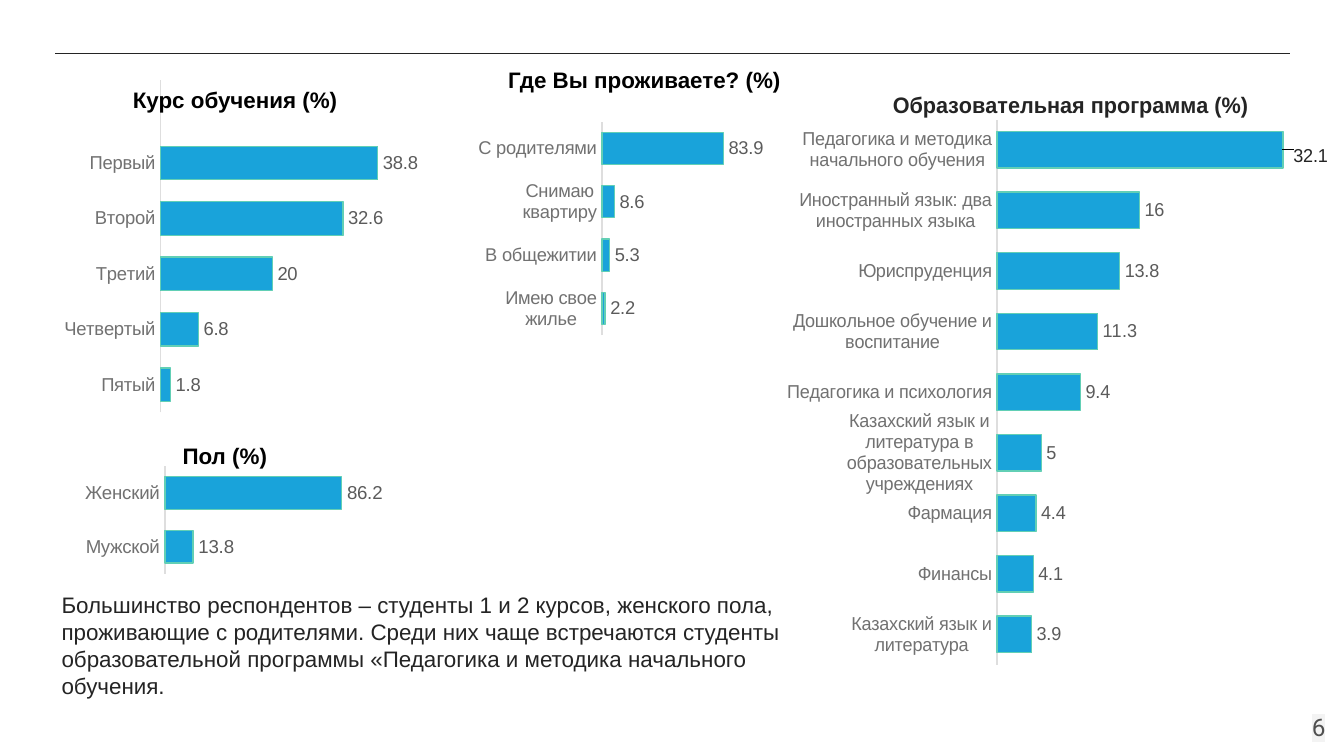
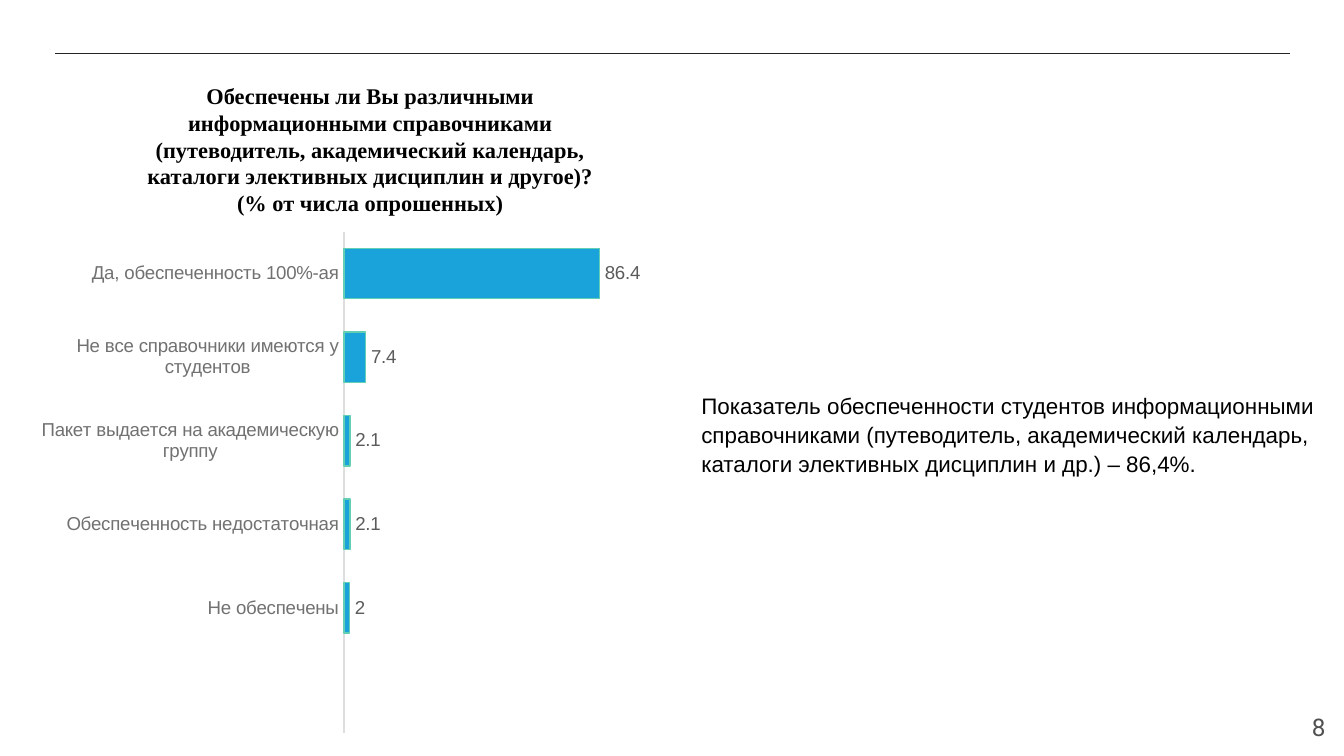
from dataclasses import dataclass
from typing import Any, Optional

from lxml import etree
from pptx import Presentation
from pptx import util as u
from pptx.chart.data import CategoryChartData
from pptx.dml.color import RGBColor
from pptx.enum import chart as ch, shapes, text
from pptx.oxml.ns import qn

SLIDE_W, SLIDE_H = u.Inches(10), u.Inches(5.625)
COLUMNS, ROWS = 100, 56.25

INK, BLACK, PAGE_INK, PAGE_MARK = "242424", "000000", "505050", "F3F3F3"
BAR, BAR_EDGE, AXIS = "19A3DA", "62CFB5", "DEDEDE"
CATEGORY_INK, VALUE_INK = "717171", "5B5B5B"
LEFT, CENTER, RIGHT = text.PP_ALIGN.LEFT, text.PP_ALIGN.CENTER, text.PP_ALIGN.RIGHT


@dataclass(frozen=True)
class Area:
    """A place on the slide, in grid columns and rows."""
    col: float
    row: float
    cols: float
    rows: float


@dataclass(frozen=True)
class Caption:
    area: Area
    lines: tuple[str, ...]
    color: str = BLACK
    font: str = "Arial"
    size: float = 12
    bold: bool = False
    align: Any = LEFT
    inset: float = 1
    spacing: float = 1.0
    anchor: Any = text.MSO_ANCHOR.TOP


@dataclass(frozen=True)
class BarChart:
    """Bars run from bottom to top; plot holds shares of the chart area."""
    area: Area
    plot: tuple[float, float, float, float]
    answers: tuple[tuple[str, Optional[float]], ...]
    title: str = ""
    shifted_label: Optional[int] = None


@dataclass(frozen=True)
class Page:
    number: str
    charts: tuple[BarChart, ...]
    captions: tuple[Caption, ...]
    marked: bool = False


def heading(area: Area, *lines: str, **changes: Any) -> Caption:
    return Caption(area, lines, **({"bold": True, "align": CENTER, "inset": 0.5} | changes))


PAGES = (
    Page(
        "6",
        charts=(
            BarChart(Area(3.6, 31.8, 25.5, 12.6), (0.34, 0.229, 0.599, 0.637),
                     (("Мужской", 13.8), ("Женский", 86.2))),
            BarChart(Area(2.6, 5.2, 28.5, 26.2), (0.332, 0.029, 0.668, 0.944),
                     (("Пятый", 1.8), ("Четвертый", 6.8), ("Третий", 20),
                      ("Второй", 32.6), ("Первый", 38.8), ("", None))),
            BarChart(Area(56.8, 6, 42, 46), (0.428, 0.063, 0.572, 0.882),
                     (("Казахский язык и литература", 3.9),
                      ("Финансы", 4.1),
                      ("Фармация", 4.4),
                      ("Казахский язык и литература в образовательных учреждениях", 5),
                      ("Педагогика и психология", 9.4),
                      ("Дошкольное обучение и воспитание", 11.3),
                      ("Юриспруденция", 13.8),
                      ("Иностранный язык: два иностранных языка", 16),
                      ("Педагогика и методика начального обучения", 32.1)),
                     title="Образовательная программа (%)", shifted_label=8),
            BarChart(Area(34.7, 9, 22.1, 16), (0.466, 0, 0.448, 1),
                     (("Имею свое жилье", 2.2), ("В общежитии", 5.3),
                      ("Снимаю квартиру", 8.6), ("С родителями", 83.9))),
        ),
        captions=(
            Caption(Area(3.6, 43, 56.6, 11.1),
                    ("Большинство респондентов – студенты 1 и 2 курсов, женского пола, "
                     "проживающие с родителями. Среди них чаще встречаются студенты "
                     "образовательной программы «Педагогика и методика начального обучения.",),
                    color=INK),
            heading(Area(6.1, 5.9, 22.8, 3), "Курс обучения (%)"),
            heading(Area(35.2, 4.4, 25.5, 3), "Где Вы проживаете? (%)"),
            heading(Area(12.6, 31.9, 10.5, 3), "Пол (%)", align=LEFT, inset=1),
        ),
        marked=True,
    ),
    Page(
        "8",
        charts=(
            BarChart(Area(3.1, 17.2, 45.7, 37.4), (0.492, 0, 0.482, 1),
                     (("", None),
                      ("Не обеспечены", 2),
                      ("Обеспеченность недостаточная", 2.1),
                      ("Пакет выдается на академическую группу", 2.1),
                      ("Не все справочники имеются у студентов", 7.4),
                      ("Да, обеспеченность 100%-ая", 86.4))),
        ),
        captions=(
            Caption(Area(51.2, 28, 48.4, 8.9),
                    ("Показатель обеспеченности студентов информационными справочниками "
                     "(путеводитель, академический календарь, каталоги элективных "
                     "дисциплин и др.) – 86,4%.",), spacing=1.08),
            heading(Area(8.7, 5.1, 37.7, 12.1),
                    "Обеспечены ли Вы различными информационными справочниками "
                    "(путеводитель, академический календарь, каталоги элективных "
                    "дисциплин и другое)?",
                    "(% от числа опрошенных)", font="Times New Roman", inset=1),
        ),
    ),
)


def rgb(value: str) -> RGBColor:
    return RGBColor.from_string(value)


def col(count: float) -> int:
    return round(SLIDE_W * count / COLUMNS)


def row(count: float) -> int:
    return round(SLIDE_H * count / ROWS)


def box(area: Area) -> tuple[int, int, int, int]:
    return col(area.col), row(area.row), col(area.cols), row(area.rows)


def apply(target: Any, **values: Any) -> None:
    for name, value in values.items():
        setattr(target, name, value)


def set_font(font: Any, color: str, size: float = 10, name: str = "Arial",
             bold: bool = False) -> None:
    apply(font, size=u.Pt(size), name=name, bold=bold)
    font.color.rgb = rgb(color)


def set_line(line: Any, color: str) -> None:
    line.color.rgb = rgb(color)
    line.width = u.Pt(0.75)


def set_layout(parent: Any, index: int, **parts: Any) -> None:
    """Put a manual layout into a chart element as its child number index."""
    for old in parent.findall(qn("c:layout")):
        parent.remove(old)
    layout = etree.Element(qn("c:layout"))
    manual = etree.SubElement(layout, qn("c:manualLayout"))
    for name, value in parts.items():
        etree.SubElement(manual, qn(f"c:{name}")).set("val", str(value))
    parent.insert(index, layout)


def add_caption(slide: Any, caption: Caption) -> Any:
    frame = slide.shapes.add_textbox(*box(caption.area)).text_frame
    inset = col(caption.inset)
    apply(frame, word_wrap=True, vertical_anchor=caption.anchor, margin_left=inset,
          margin_right=inset, margin_top=inset, margin_bottom=inset)
    for number, line in enumerate(caption.lines):
        paragraph = frame.add_paragraph() if number else frame.paragraphs[0]
        apply(paragraph, alignment=caption.align, line_spacing=caption.spacing)
        run = paragraph.add_run()
        run.text = line
        set_font(run.font, caption.color, caption.size, caption.font, caption.bold)
    return frame


def add_rule(slide: Any) -> None:
    rule = slide.shapes.add_connector(shapes.MSO_CONNECTOR.STRAIGHT,
                                      col(4.1), row(4), col(96), row(4))
    set_line(rule.line, INK)
    etree.SubElement(rule._element.spPr, qn("a:effectLst"))


def add_page_number(slide: Any, page: Page) -> None:
    frame = add_caption(slide, Caption(
        Area(93.6, 51.9, 6, 4.3), (page.number,), color=PAGE_INK, font="Roboto",
        size=13, align=RIGHT, anchor=text.MSO_ANCHOR.MIDDLE))
    if page.marked:
        fill = frame._txBody.find(".//" + qn("a:solidFill"))
        mark = etree.Element(qn("a:highlight"))
        etree.SubElement(mark, qn("a:srgbClr")).set("val", PAGE_MARK)
        fill.addnext(mark)


def add_bar_chart(slide: Any, survey: BarChart) -> None:
    data = CategoryChartData()
    data.categories = [answer for answer, _ in survey.answers]
    data.add_series("Series 1", [share for _, share in survey.answers])
    chart = slide.shapes.add_chart(ch.XL_CHART_TYPE.BAR_CLUSTERED,
                                   *box(survey.area), data).chart
    apply(chart, has_legend=False, has_title=bool(survey.title))
    set_font(chart.font, INK)
    if survey.title:
        run = chart.chart_title.text_frame.paragraphs[0].add_run()
        run.text = survey.title
        set_font(run.font, INK, 12, bold=True)
        set_layout(chart.chart_title._element, 1, xMode="edge", yMode="edge", x=0.23, y=0.01)

    apply(chart.value_axis, visible=False, has_major_gridlines=False)
    answers_axis = chart.category_axis
    apply(answers_axis, major_tick_mark=ch.XL_TICK_MARK.NONE,
          minor_tick_mark=ch.XL_TICK_MARK.NONE, has_major_gridlines=False)
    set_font(answers_axis.tick_labels.font, CATEGORY_INK)
    set_line(answers_axis.format.line, AXIS)

    apply(chart.plots[0], gap_width=66, vary_by_categories=False)
    shares = chart.plots[0].series[0]
    shares.format.fill.solid()
    shares.format.fill.fore_color.rgb = rgb(BAR)
    set_line(shares.format.line, BAR_EDGE)
    labels = shares.data_labels
    apply(labels, show_value=True, position=ch.XL_LABEL_POSITION.OUTSIDE_END)
    set_font(labels.font, VALUE_INK)

    root = chart._chartSpace
    if survey.shifted_label is not None:
        label = shares.points[survey.shifted_label].data_label
        set_font(label.font, INK)
        label.position = ch.XL_LABEL_POSITION.OUTSIDE_END
        set_layout(root.find(".//" + qn("c:dLbl")), 1, x=0.01, y=0.01)
    x, y, w, h = survey.plot
    set_layout(root.find(".//" + qn("c:plotArea")), 0, layoutTarget="inner",
               xMode="edge", yMode="edge", x=x, y=y, w=w, h=h)


def main() -> None:
    deck = Presentation()
    apply(deck, slide_width=SLIDE_W, slide_height=SLIDE_H)
    for page in PAGES:
        slide = deck.slides.add_slide(deck.slide_layouts[6])
        add_rule(slide)
        add_page_number(slide, page)
        for survey in page.charts:
            add_bar_chart(slide, survey)
        for caption in page.captions:
            add_caption(slide, caption)
    deck.save("out.pptx")


if __name__ == "__main__":
    main()
